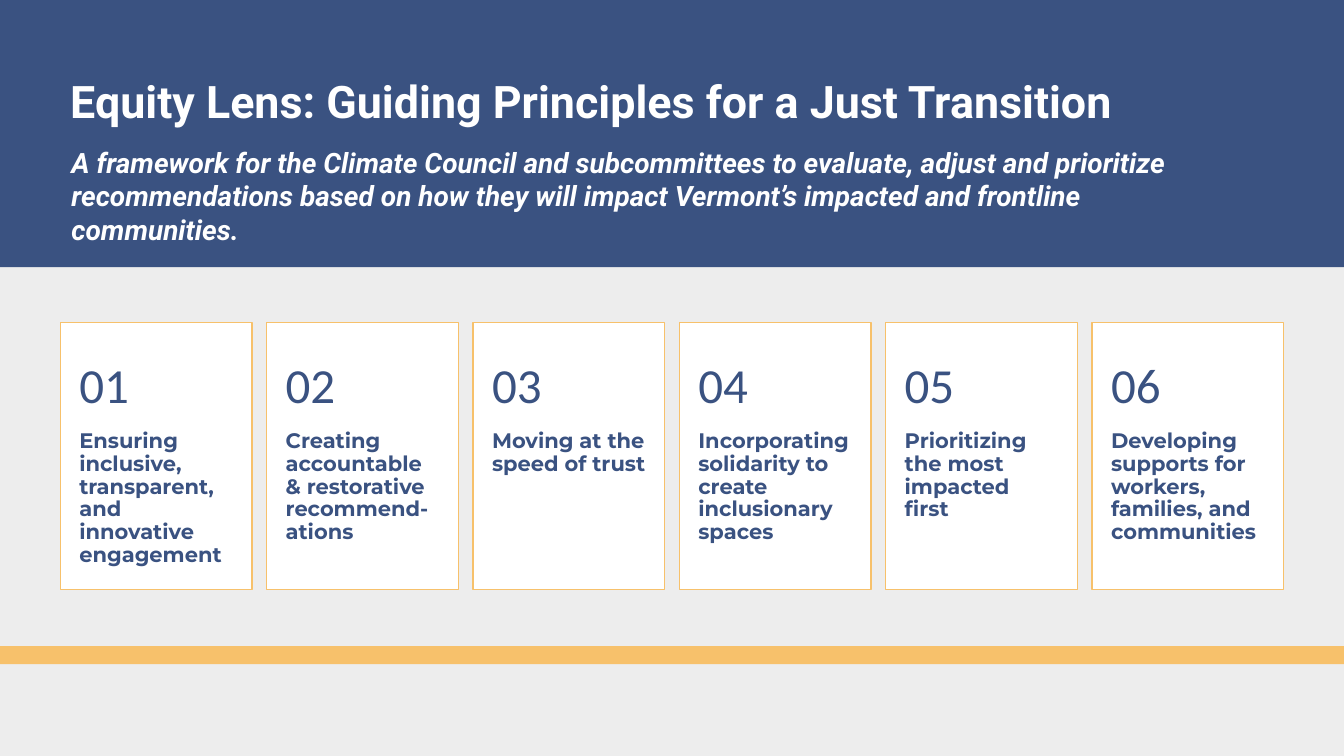
from pptx import Presentation
from pptx.dml.color import RGBColor
from pptx.enum.shapes import MSO_SHAPE
from pptx.enum.text import MSO_ANCHOR, MSO_AUTO_SIZE, PP_ALIGN
from pptx.util import Cm, Pt

RECT = MSO_SHAPE.RECTANGLE
TOP, MID = MSO_ANCHOR.TOP, MSO_ANCHOR.MIDDLE
LEFT = PP_ALIGN.LEFT
FIXED = MSO_AUTO_SIZE.NONE

WIDE, HIGH = 33.87, 19.05
HEAD = 6.73
EDGE, STEP = 1.52, 5.2
CARD = (8.13, 4.83, 6.73)

HUES = {"navy": "3A5281", "gold": "F7C16B", "pale": "EDEDED", "white": "FFFFFF"}

STYLES = {
    "title": {"name": "Roboto", "size": Pt(32), "bold": True, "hue": "white",
              "space": 0.9, "anchor": MID, "pad": (0.25, 0.13, 0.25, 0.13)},
    "lead": {"name": "Roboto", "size": Pt(20), "bold": True, "italic": True,
             "hue": "white", "space": 1.0, "anchor": TOP,
             "pad": (0.25, 0.13, 0.25, 0.13)},
    "digit": {"name": "Calibri", "size": Pt(35), "hue": "navy", "space": 0.9,
              "anchor": MID, "pad": (0.48, 0.46, 0.48, 0.46)},
    "label": {"name": "Montserrat", "size": Pt(15), "bold": True, "hue": "navy",
              "space": 0.9, "anchor": TOP, "pad": (0.48, 0, 0.48, 0.91)},
}

GOALS = [
    "Ensuring inclusive, transparent, and innovative engagement",
    "Creating accountable & restorative recommend-ations",
    "Moving at the speed of trust",
    "Incorporating solidarity to create inclusionary spaces",
    "Prioritizing the most impacted first",
    "Developing supports for workers, families, and communities",
]


class Deck:
    """Hold the styles and the current slide, and draw each kind of element."""

    def __init__(self):
        self.show = Presentation()
        self.show.slide_width, self.show.slide_height = Cm(WIDE), Cm(HIGH)
        self.slide = self.show.slides.add_slide(self.show.slide_layouts[5])

    def hue(self, name):
        return RGBColor.from_string(HUES[name])

    def block(self, box, fill, line=None):
        shape = self.slide.shapes.add_shape(RECT, *map(Cm, box))
        shape.shadow.inherit = False
        shape.fill.solid()
        shape.fill.fore_color.rgb = self.hue(fill)
        if line:
            shape.line.color.rgb = self.hue(line)
            shape.line.width = Pt(1)
        else:
            shape.line.fill.background()

    def fill(self, shape, text, style):
        form = dict(STYLES[style])
        frame = shape.text_frame
        frame.word_wrap, frame.auto_size = True, FIXED
        frame.vertical_anchor = form.pop("anchor")
        for side, pad in zip(("left", "top", "right", "bottom"), form.pop("pad")):
            setattr(frame, f"margin_{side}", Cm(pad))
        para = frame.paragraphs[0]
        para.alignment, para.line_spacing = LEFT, form.pop("space")
        run = para.add_run()
        run.text = text
        run.font.color.rgb = self.hue(form.pop("hue"))
        for key, value in form.items():
            setattr(run.font, key, value)

    def text(self, box, text, style):
        self.fill(self.slide.shapes.add_textbox(*map(Cm, box)), text, style)

    def title(self, box, text):
        shape = self.slide.shapes.title
        shape.element.getparent().append(shape.element)
        for key, value in zip(("left", "top", "width", "height"), box):
            setattr(shape, key, Cm(value))
        self.fill(shape, text, "title")

    def card(self, rank, goal):
        left = EDGE + rank * STEP
        top, wide, high = CARD
        self.block((left, top, wide, high), "white", "gold")
        self.text((left, 10.85, wide, 4.04), goal, "label")
        self.text((left, top, wide, 3.3), f"{rank + 1:02}", "digit")


def main():
    deck = Deck()
    deck.block((0, 0, WIDE, HIGH), "pale")
    for rank, goal in enumerate(GOALS):
        deck.card(rank, goal)
    deck.block((0, 0, WIDE, HEAD), "navy")
    deck.title((EDGE, 0.79, 30.81, 3.68),
               "Equity Lens: Guiding Principles for a Just Transition")
    deck.text((1.55, 3.53, 28.93, 1.96),
              "A framework for the Climate Council and subcommittees to evaluate, "
              "adjust and prioritize recommendations based on how they will impact "
              "Vermont’s impacted and frontline communities.", "lead")
    deck.block((0, 16.28, WIDE, 0.46), "gold")
    deck.show.save("out.pptx")


if __name__ == "__main__":
    main()
